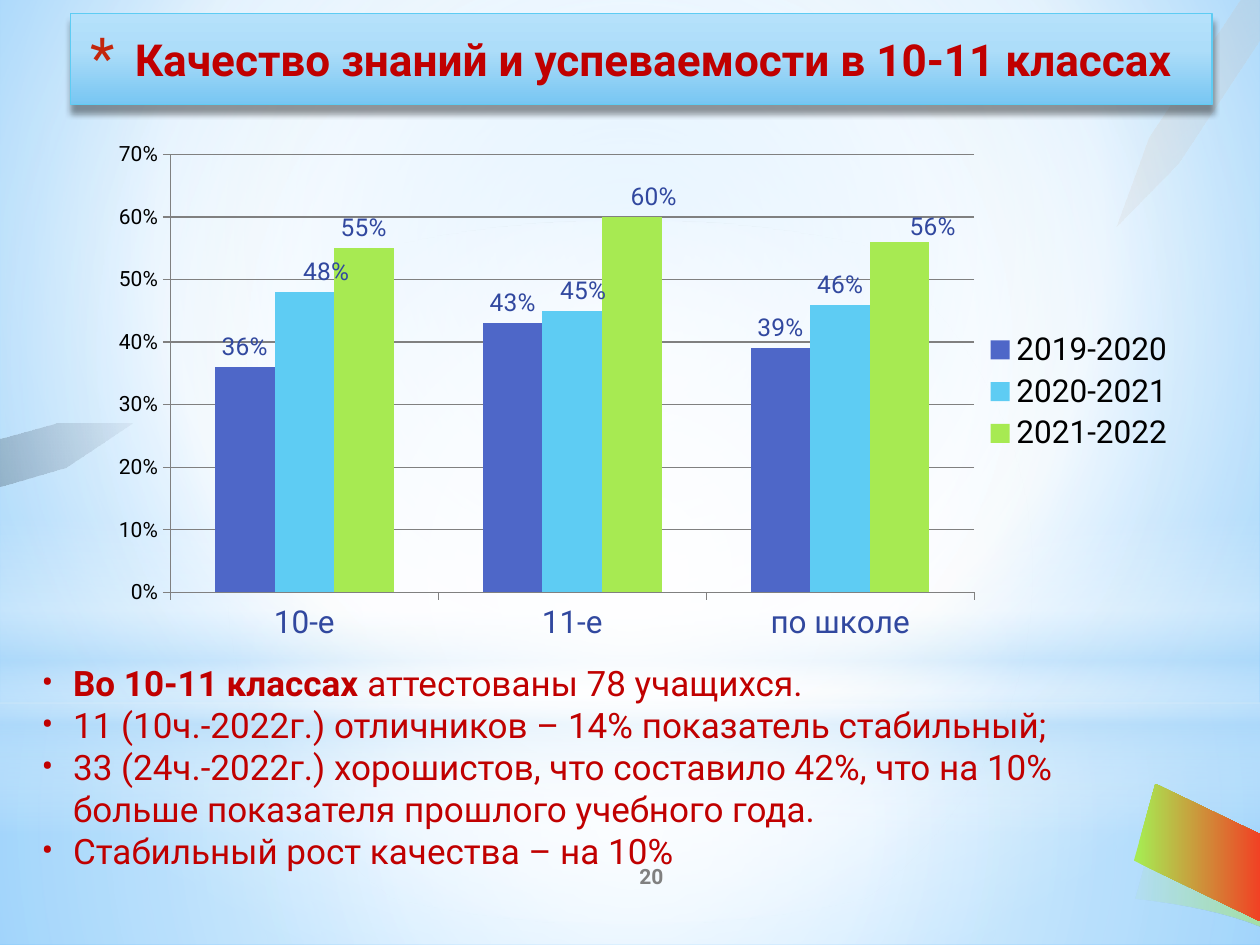
from dataclasses import dataclass

from lxml.etree import SubElement
from pptx import Presentation
from pptx.chart.data import CategoryChartData
from pptx.dml.color import RGBColor
from pptx.enum.chart import XL_CHART_TYPE, XL_LABEL_POSITION, XL_LEGEND_POSITION, XL_TICK_MARK
from pptx.enum.shapes import MSO_SHAPE
from pptx.enum.text import MSO_ANCHOR, MSO_AUTO_SIZE, PP_ALIGN
from pptx.oxml import parse_xml
from pptx.oxml.ns import nsdecls, qn
from pptx.util import Inches, Pt


@dataclass(frozen=True)
class Theme:
    font: str = "Roboto"
    red: str = "C00000"
    star: str = "C3260C"
    navy: str = "31489F"
    black: str = "000000"
    gray: str = "808080"
    white: str = "FFFFFF"
    sky: str = "B4DCFA"
    cyan: str = "5ECCF3"
    lime: str = "A7EA52"
    indigo: str = "4E67C8"
    title_size: float = 25.2
    list_size: float = 20
    axis_size: float = 18
    label_size: float = 14
    small_size: float = 12


THEME = Theme()
CENTER = (50, 50, 50, 50)


def style_font(font, size, color, bold=False):
    font.name = THEME.font
    font.size = Pt(size)
    font.bold = bold
    font.color.rgb = RGBColor.from_string(color)


def paint_gradient(fill, holder, stops, angle=None, focus=CENTER):
    """Fill with (position, colour, opacity) stops: linear with an angle, else circular."""
    fill.solid()
    marks = "".join(
        f'<a:gs pos="{position * 1000}"><a:srgbClr val="{color}">'
        f'<a:alpha val="{opacity * 1000}"/></a:srgbClr></a:gs>'
        for position, color, opacity in stops)
    if angle is None:
        sides = " ".join(f'{side}="{value * 1000}"' for side, value in zip("ltrb", focus))
        shading = f'<a:path path="circle"><a:fillToRect {sides}/></a:path>'
    else:
        shading = f'<a:lin ang="{angle * 60000}" scaled="0"/>'
    gradient = parse_xml(f'<a:gradFill {nsdecls("a")} rotWithShape="1">'
                         f'<a:gsLst>{marks}</a:gsLst>{shading}</a:gradFill>')
    holder.replace(holder.find(qn("a:solidFill")), gradient)


def set_layout(parent, index, target=None, **fractions):
    """Give a chart part a manual layout, as fractions of the chart."""
    for old in parent.findall(qn("c:layout")):
        parent.remove(old)
    layout = parse_xml(f'<c:layout {nsdecls("c")}><c:manualLayout/></c:layout>')
    values = {"layoutTarget": target} if target else {}
    if "w" in fractions:
        values.update(xMode="edge", yMode="edge")
    values.update(fractions)
    for name, value in values.items():
        SubElement(layout[0], qn(f"c:{name}")).set("val", str(value))
    parent.insert(index, layout)


def curve(start, first, second, end, steps=12):
    """Points along a cubic curve, without its start."""
    for step in range(1, steps + 1):
        t = step / steps
        weights = ((1 - t) ** 3, 3 * t * (1 - t) ** 2, 3 * t * t * (1 - t), t ** 3)
        yield tuple(sum(w * p[axis] for w, p in zip(weights, (start, first, second, end)))
                    for axis in (0, 1))


class SlideBuilder:
    def __init__(self, deck):
        self.page = deck.slides.add_slide(deck.slide_layouts[1])

    def background(self, stops, focus):
        fill = self.page.background.fill
        fill.solid()
        holder = self.page.element.find(".//" + qn("p:bgPr"))
        paint_gradient(fill, holder, stops, focus=focus)

    def finish_decor(self, shape, stops, angle):
        shape.shadow.inherit = False
        shape.line.fill.background()
        paint_gradient(shape.fill, shape.element.spPr, stops, angle)

    def glow(self, kind, top, height, stops, angle=None):
        shape = self.page.shapes.add_shape(kind, 0, Inches(top), Inches(10), Inches(height))
        self.finish_decor(shape, stops, angle)

    def ribbon(self, points, stops, angle):
        corners = [(Inches(x), Inches(y)) for x, y in points]
        outline = self.page.shapes.build_freeform(*corners[0])
        outline.add_line_segments(corners[1:], close=True)
        self.finish_decor(outline.convert_to_shape(), stops, angle)

    def place(self, box, left, top, width, height):
        box.left, box.top = Inches(left), Inches(top)
        box.width, box.height = Inches(width), Inches(height)
        box.text_frame.word_wrap = True
        box.text_frame.auto_size = MSO_AUTO_SIZE.NONE
        box.element.getparent().append(box.element)

    def add_spans(self, para, spans, size, color):
        for text, bold in spans:
            span = para.add_run()
            span.text = text
            style_font(span.font, size, color, bold)

    def bullet(self, para, symbol, indent, color, percent=100):
        properties = para._p.get_or_add_pPr()
        properties.set("marL", str(Inches(indent)))
        properties.set("indent", str(-Inches(indent)))
        tint = SubElement(properties, qn("a:buClr"))
        SubElement(tint, qn("a:srgbClr")).set("val", color)
        SubElement(properties, qn("a:buSzPct")).set("val", str(percent * 1000))
        SubElement(properties, qn("a:buFont")).set("typeface", THEME.font)
        SubElement(properties, qn("a:buChar")).set("char", symbol)
        para.alignment = PP_ALIGN.LEFT
        para.space_before = Pt(0)

    def title(self, text):
        box = self.page.shapes.title
        self.place(box, 0.56, 0.11, 9.06, 0.72)
        frame = box.text_frame
        frame.margin_left = Inches(0.16)
        frame.vertical_anchor = MSO_ANCHOR.MIDDLE
        properties = box.element.spPr
        paint_gradient(box.fill, properties,
                       [(0, "B5E1FB", 100), (40, "ADDDF9", 100), (100, "78C6F2", 100)], 90)
        box.line.color.rgb = RGBColor.from_string(THEME.cyan)
        box.line.width = Pt(0.75)
        box.shadow.inherit = False
        properties.find(qn("a:effectLst")).append(parse_xml(
            f'<a:outerShdw {nsdecls("a")} blurRad="50800" dist="50800" dir="5400000">'
            '<a:srgbClr val="000000"><a:alpha val="40000"/></a:srgbClr></a:outerShdw>'))
        para = frame.paragraphs[0]
        self.bullet(para, "*", 0.35, THEME.star, 128)
        self.add_spans(para, [(text, True)], THEME.title_size, THEME.red)

    def bullets(self, items):
        box = self.page.placeholders[1]
        self.place(box, 0.23, 5.2, 9.2, 1.68)
        frame = box.text_frame
        for number, spans in enumerate(items):
            para = frame.add_paragraph() if number else frame.paragraphs[0]
            self.bullet(para, "•", 0.25, THEME.red)
            self.add_spans(para, spans, THEME.list_size, THEME.red)

    def page_number(self, text):
        box = self.page.shapes.add_textbox(0, 0, 0, 0)
        self.place(box, 4.17, 6.75, 2, 0.4)
        box.text_frame.vertical_anchor = MSO_ANCHOR.MIDDLE
        para = box.text_frame.paragraphs[0]
        para.alignment = PP_ALIGN.CENTER
        self.add_spans(para, [(text, True)], THEME.small_size, THEME.gray)

    def column_chart(self, categories, series, shifts):
        """Draw columns; shifts maps (series, point) to a label offset."""
        data = CategoryChartData(number_format="0%")
        data.categories = categories
        for name, values, _ in series:
            data.add_series(name, values)
        chart = self.page.shapes.add_chart(
            XL_CHART_TYPE.COLUMN_CLUSTERED, Inches(0.74), Inches(1.06),
            Inches(8.74), Inches(4.14), data).chart
        chart.has_title = False
        style_font(chart.font, 10, THEME.black)
        plot = chart.plots[0]
        plot.gap_width, plot.overlap, plot.vary_by_categories = 150, 0, False
        set_layout(chart._chartSpace.chart.plotArea, 0, "inner",
                   x=0.07, y=0.04, w=0.73, h=0.84)

        for axis, size, color in ((chart.category_axis, THEME.axis_size, THEME.navy),
                                  (chart.value_axis, THEME.small_size, THEME.black)):
            axis.major_tick_mark = XL_TICK_MARK.OUTSIDE
            style_font(axis.tick_labels.font, size, color)
            axis.format.line.color.rgb = RGBColor.from_string(THEME.gray)
        scale = chart.value_axis
        scale.minimum_scale, scale.maximum_scale, scale.major_unit = 0, 0.7, 0.1
        scale.has_major_gridlines = True
        scale.major_gridlines.format.line.color.rgb = RGBColor.from_string(THEME.gray)
        scale.tick_labels.number_format = "0%"
        scale.tick_labels.number_format_is_linked = False

        for columns, (_, _, color) in zip(plot.series, series):
            columns.format.fill.solid()
            columns.format.fill.fore_color.rgb = RGBColor.from_string(color)
            labels = columns.data_labels
            labels.show_value = True
            labels.number_format, labels.number_format_is_linked = "0%", False
            labels.position = XL_LABEL_POSITION.OUTSIDE_END
            style_font(labels.font, THEME.label_size, THEME.navy)
        for (row, point), (right, down) in shifts.items():
            label = plot.series[row].points[point].data_label
            label.position = XL_LABEL_POSITION.OUTSIDE_END
            style_font(label.font, THEME.label_size, THEME.navy)
            set_layout(label._dLbl, 1, x=right, y=down)

        chart.has_legend = True
        legend = chart.legend
        legend.position = XL_LEGEND_POSITION.RIGHT
        legend.include_in_layout = False
        style_font(legend.font, THEME.axis_size, THEME.black)
        set_layout(legend._element, 1, x=0.81, y=0.37, w=0.17, h=0.25)


def main():
    deck = Presentation()
    deck.slide_width, deck.slide_height = Inches(10), Inches(7.5)
    slide = SlideBuilder(deck)
    white, sky, lime = THEME.white, THEME.sky, THEME.lime
    slide.background([(0, "9ED5FF", 100), (60, white, 100), (100, "5BB9FF", 100)], (20, 10, 20, 60))
    slide.glow(MSO_SHAPE.RECTANGLE, 5.58, 1.92, [(0, white, 91), (37, white, 76), (100, sky, 79)])
    slide.glow(MSO_SHAPE.RECTANGLE, 0, 5.58, [(0, white, 89), (48, white, 62), (100, sky, 79)])
    slide.glow(MSO_SHAPE.RECTANGLE, 4.12, 2.5, [(0, white, 0), (29, white, 30), (45, sky, 40),
                                                (55, white, 26), (65, sky, 60), (100, white, 0)], 90)
    slide.glow(MSO_SHAPE.OVAL, 1.75, 5.58, [(0, white, 100), (56, white, 0)])
    slide.ribbon([(9.01, 7.13), *curve((9.01, 7.13), (9.01, 7.13), (9.59, 7.18), (10, 7.35)),
                  (10, 6.68), *curve((10, 6.68), (9.54, 6.51), (9.18, 6.52), (9.18, 6.52))],
                 [(3, lime, 6), (100, lime, 50)], 0)
    slide.ribbon([(10, 6.62), (9.17, 6.22), (9, 6.83), (10, 7.31)],
                 [(3, lime, 100), (100, "F14124", 100)], 0)
    slide.ribbon([(1.05, 3.36), (0.44, 3.36), (0, 3.48), (0, 3.86), (0.52, 3.71)],
                 [(0, "212745", 5), (100, THEME.black, 20)], 164)
    slide.ribbon([(9.84, 0), (9.12, 1.09), (8.86, 1.8), (9.35, 1.3), (10, 0.31), (10, 0)],
                 [(0, "FF8021", 5), (100, sky, 20)], 53)

    slide.title("Качество знаний и успеваемости в 10-11 классах")
    slide.page_number("20")
    slide.column_chart(
        ["10-е", "11-е", "по школе"],
        [("2019-2020", (0.36, 0.43, 0.39), THEME.indigo),
         ("2020-2021", (0.48, 0.45, 0.46), THEME.cyan),
         ("2021-2022", (0.55, 0.6, 0.56), lime)],
        {(1, 0): (0.02, 0), (1, 1): (0.01, 0), (2, 1): (0.02, 0), (2, 2): (0.03, 0.01)})
    slide.bullets([
        [("Во 10-11 классах", True), (" аттестованы 78 учащихся.", False)],
        [("11 (10ч.-2022г.) отличников – 14% показатель стабильный;", False)],
        [("33 (24ч.-2022г.) хорошистов, что составило 42%, что на 10% "
          "больше показателя прошлого учебного года.", False)],
        [("Стабильный рост качества – на 10%", False)]])
    deck.save("out.pptx")


if __name__ == "__main__":
    main()
